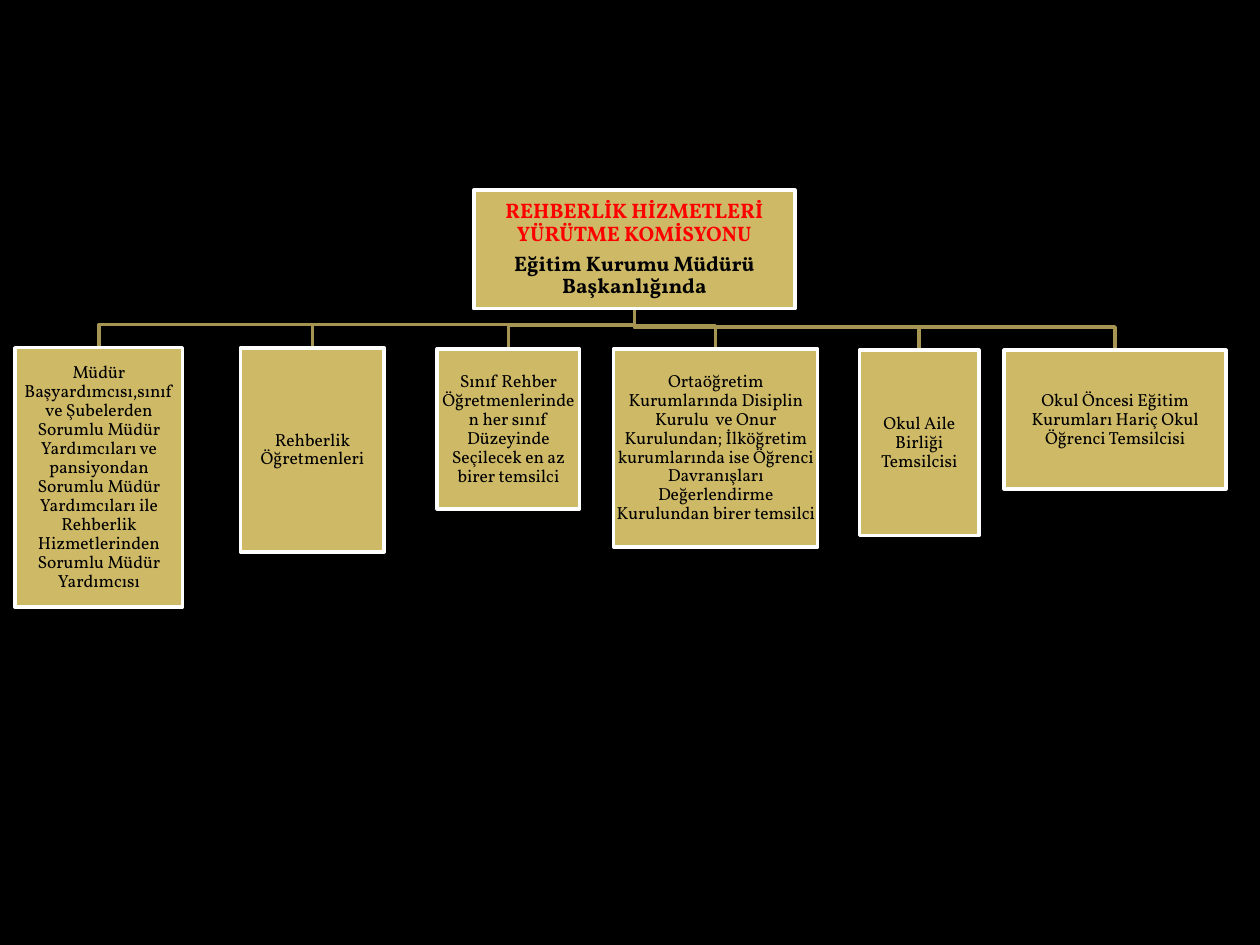
from pptx import Presentation
from pptx.dml.color import RGBColor
from pptx.enum.shapes import MSO_SHAPE as Shape
from pptx.enum.text import MSO_ANCHOR as Anchor, PP_ALIGN as Align
from pptx.util import Inches, Pt

BLACK = RGBColor(0x00, 0x00, 0x00)
WHITE = RGBColor(0xFF, 0xFF, 0xFF)
RED = RGBColor(0xFF, 0x00, 0x00)
GOLD = RGBColor(0xCE, 0xB9, 0x66)
DARK_GOLD = RGBColor(0xA5, 0x94, 0x52)

COLUMNS, ROWS = 100, 75
BLANK_LAYOUT = 6


class OrgChart:
    font = "Vollkorn"
    line_width = Pt(2)
    inset = Inches(0.01)
    bend = 1.85

    def __init__(self, deck):
        self.cell_width = deck.slide_width / COLUMNS
        self.cell_height = deck.slide_height / ROWS
        self.slide = deck.slides.add_slide(deck.slide_layouts[BLANK_LAYOUT])
        background = self.slide.background.fill
        background.solid()
        background.fore_color.rgb = BLACK

    def x(self, columns):
        return round(columns * self.cell_width)

    def y(self, rows):
        return round(rows * self.cell_height)

    def branch(self, parent, child):
        parent_left, parent_top, parent_width, parent_height = parent
        child_left, child_top, child_width, _ = child
        start = self.x(parent_left + parent_width / 2)
        end = self.x(child_left + child_width / 2)
        turn = self.y(child_top - self.bend)
        builder = self.slide.shapes.build_freeform(
            start, self.y(parent_top + parent_height))
        builder.add_line_segments(
            [(start, turn), (end, turn), (end, self.y(child_top))], close=False)
        elbow = builder.convert_to_shape()
        elbow.shadow.inherit = False
        elbow.fill.background()
        elbow.line.color.rgb = DARK_GOLD
        elbow.line.width = self.line_width

    def box(self, place, paragraphs, size, bold=False):
        left, top, width, height = place
        card = self.slide.shapes.add_shape(
            Shape.RECTANGLE, self.x(left), self.y(top), self.x(width), self.y(height))
        card.shadow.inherit = False
        card.fill.solid()
        card.fill.fore_color.rgb = GOLD
        card.line.color.rgb = WHITE
        card.line.width = self.line_width
        frame = card.text_frame
        frame.word_wrap = True
        frame.vertical_anchor = Anchor.MIDDLE
        frame.margin_left = frame.margin_right = self.inset
        frame.margin_top = frame.margin_bottom = self.inset
        for index, (wording, color) in enumerate(paragraphs):
            paragraph = frame.add_paragraph() if index else frame.paragraphs[0]
            paragraph.alignment = Align.CENTER
            paragraph.line_spacing = 0.9
            paragraph.space_after = Pt(0.35 * size)
            run = paragraph.add_run()
            run.text = wording
            run.font.name = self.font
            run.font.size = Pt(size)
            run.font.bold = bold
            run.font.color.rgb = color


COMMISSION = (37.6, 15.1, 25.5, 9.4)
COMMISSION_TEXT = [
    ("REHBERLİK HİZMETLERİ YÜRÜTME KOMİSYONU", RED),
    ("Eğitim Kurumu Müdürü Başkanlığında", BLACK),
]
MEMBERS = [
    ((1.2, 27.6, 13.3, 20.6),
     "Müdür Başyardımcısı,sınıf ve Şubelerden Sorumlu Müdür Yardımcıları "
     "ve pansiyondan Sorumlu Müdür Yardımcıları ile Rehberlik "
     "Hizmetlerinden Sorumlu Müdür Yardımcısı"),
    ((19.1, 27.6, 11.4, 16.2), "Rehberlik Öğretmenleri"),
    ((34.7, 27.7, 11.3, 12.7),
     "Sınıf Rehber Öğretmenlerinden her sınıf Düzeyinde Seçilecek "
     "en az birer temsilci"),
    ((48.7, 27.7, 16.2, 15.7),
     "Ortaöğretim Kurumlarında Disiplin Kurulu  ve Onur Kurulundan; "
     "İlköğretim kurumlarında ise Öğrenci Davranışları Değerlendirme "
     "Kurulundan birer temsilci"),
    ((68.2, 27.8, 9.5, 14.7), "Okul Aile Birliği Temsilcisi"),
    ((79.7, 27.8, 17.6, 11),
     "Okul Öncesi Eğitim Kurumları Hariç Okul Öğrenci Temsilcisi"),
]


def main():
    deck = Presentation()
    deck.slide_width, deck.slide_height = Inches(10), Inches(7.5)
    chart = OrgChart(deck)
    for place, _ in reversed(MEMBERS):
        chart.branch(COMMISSION, place)
    chart.box(COMMISSION, COMMISSION_TEXT, size=12, bold=True)
    for place, duty in MEMBERS:
        chart.box(place, [(duty, BLACK)], size=10)
    deck.save("out.pptx")


if __name__ == "__main__":
    main()
